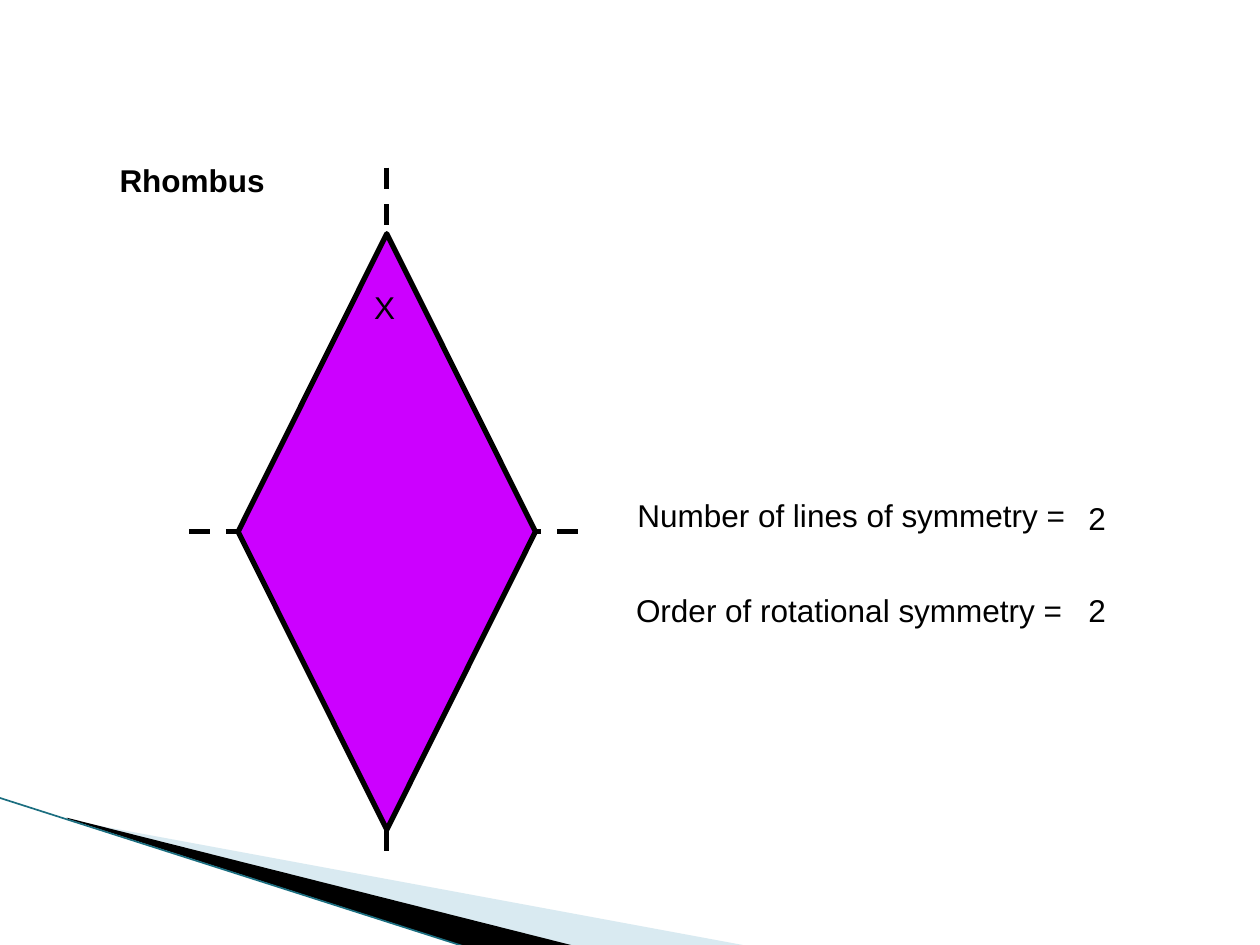
from lxml.etree import SubElement
from pptx import Presentation
from pptx.dml.color import RGBColor
from pptx.enum.dml import MSO_LINE
from pptx.enum.shapes import MSO_CONNECTOR
from pptx.enum.text import MSO_AUTO_SIZE
from pptx.oxml.ns import qn
from pptx.util import Inches, Pt

BLACK, PURPLE, TEAL, PALE_BLUE = "000000", "CC00FF", "1B6E80", "A0CBDC"
FONT = {"name": "Arial", "size": Pt(18)}
CENTRE_X, CENTRE_Y = 3.07, 4.22
HALF_WIDTH, HALF_HEIGHT = 1.18, 2.365


def paint(color_format, hex_color):
    color_format.rgb = RGBColor.from_string(hex_color)


def set_values(target, values):
    for name, value in values.items():
        setattr(target, name, value)


def add_polygon(shapes, points, color, outline=None, opacity=None):
    corners = [(Inches(x), Inches(y)) for x, y in points]
    builder = shapes.build_freeform(*corners[0], scale=1.0)
    builder.add_line_segments(corners[1:], close=True)
    polygon = builder.convert_to_shape()
    polygon.shadow.inherit = False
    polygon.fill.solid()
    paint(polygon.fill.fore_color, color)
    if opacity:
        srgb = polygon.fill._xPr.find(".//" + qn("a:srgbClr"))
        SubElement(srgb, qn("a:alpha"), val=str(opacity * 1000))
    if outline:
        paint(polygon.line.color, outline)
        polygon.line.width = Pt(3)
    else:
        polygon.line.fill.background()


def add_line(shapes, start, end, color, **line_format):
    ends = [Inches(value) for value in (*start, *end)]
    line = shapes.add_connector(MSO_CONNECTOR.STRAIGHT, *ends)
    SubElement(line._element.spPr, qn("a:effectLst"))
    paint(line.line.color, color)
    set_values(line.line, line_format)


def add_label(shapes, text, left, top, width, height=0.4, wrap=True, bold=False):
    area = [Inches(value) for value in (left, top, width, height)]
    frame = shapes.add_textbox(*area).text_frame
    set_values(frame, {"word_wrap": wrap, "text": text,
                       "auto_size": MSO_AUTO_SIZE.SHAPE_TO_FIT_TEXT})
    font = frame.paragraphs[0].runs[0].font
    set_values(font, {**FONT, "bold": bold})
    paint(font.color, BLACK)


def add_corner_decoration(shapes):
    add_polygon(shapes, [(0.55, 6.51), (5.95, 7.51), (4.56, 7.51), (0.55, 6.5)],
                PALE_BLUE, opacity=40)
    add_polygon(shapes, [(0.53, 6.49), (4.57, 7.51), (3.72, 7.52), (0.54, 6.5)], BLACK)
    add_line(shapes, (-0.01, 6.33), (3.71, 7.52), TEAL, width=Pt(0.95))


def add_rhombus(shapes):
    # Lines of symmetry, behind the rhombus
    dashed = {"width": Pt(3), "dash_style": MSO_LINE.DASH}
    add_line(shapes, (CENTRE_X, 1.33), (CENTRE_X, 6.85), BLACK, **dashed)
    add_line(shapes, (1.5, CENTRE_Y), (4.65, CENTRE_Y), BLACK, **dashed)

    # Rhombus with its marked corner
    marked_rhombus = shapes.add_group_shape().shapes
    corners = [(CENTRE_X + dx * HALF_WIDTH, CENTRE_Y + dy * HALF_HEIGHT)
               for dx, dy in ((-1, 0), (0, -1), (1, 0), (0, 1))]
    add_polygon(marked_rhombus, corners, PURPLE, outline=BLACK)
    add_label(marked_rhombus, "X", 2.87, 2.24, 0.42, 0.5, wrap=False)


def main():
    presentation = Presentation()
    set_values(presentation, {"slide_width": Inches(10), "slide_height": Inches(7.5)})
    shapes = presentation.slides.add_slide(presentation.slide_layouts[6]).shapes

    add_corner_decoration(shapes)
    add_rhombus(shapes)

    # Shape name, then each property with its value
    add_label(shapes, "Rhombus", 0.85, 1.23, 2.31, bold=True)
    add_label(shapes, "Number of lines of symmetry =", 4.96, 3.89, 3.92)
    add_label(shapes, "2", 8.54, 3.91, 0.82)
    add_label(shapes, "Order of rotational symmetry =", 4.95, 4.64, 3.64)
    add_label(shapes, "2", 8.54, 4.64, 0.87)

    presentation.save("out.pptx")


if __name__ == "__main__":
    main()
